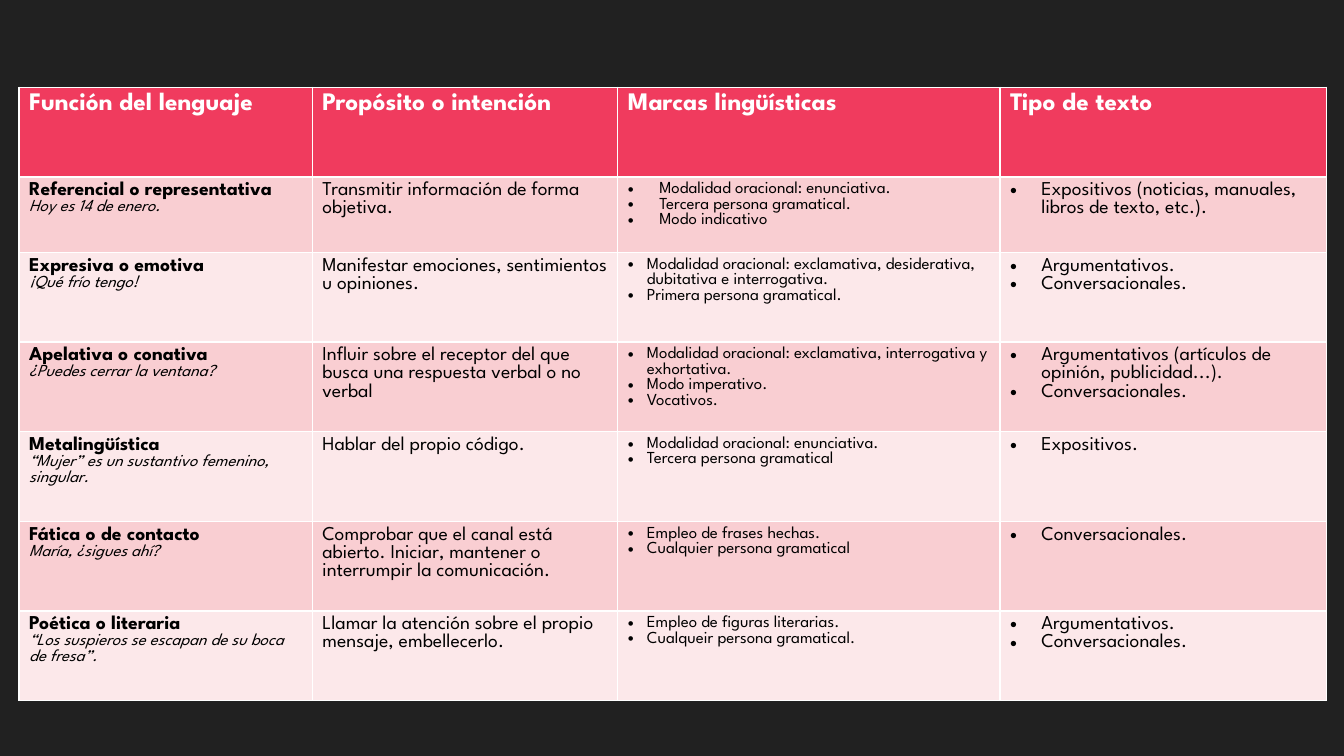
from pptx import Presentation
from pptx.dml.color import RGBColor
from pptx.util import Cm, Pt
from lxml.etree import SubElement
from pptx.oxml.ns import qn

FONT = "League Spartan"
BACKGROUND, WHITE, BLACK = "212121", "FFFFFF", "000000"
HEADER_FILL, BAND_FILLS = "F03B5E", ("F9CED2", "FCE8EA")

HEADERS = ["Función del lenguaje", "Propósito o intención",
           "Marcas lingüísticas", "Tipo de texto"]
# Function, example, purpose, linguistic marks, text types
FUNCTIONS = [
    ("Referencial o representativa", "Hoy es 14 de enero.",
     "Transmitir información de forma objetiva.",
     ["Modalidad oracional: enunciativa.", "Tercera persona gramatical.",
      "Modo indicativo"],
     ["Expositivos (noticias, manuales, libros de texto, etc.)."]),
    ("Expresiva o emotiva", "¡Qué frío tengo!",
     "Manifestar emociones, sentimientos u opiniones.",
     ["Modalidad oracional: exclamativa, desiderativa, dubitativa e interrogativa.",
      "Primera persona gramatical."],
     ["Argumentativos.", "Conversacionales."]),
    ("Apelativa o conativa", "¿Puedes cerrar la ventana?",
     "Influir sobre el receptor del que busca una respuesta verbal o no verbal",
     ["Modalidad oracional: exclamativa, interrogativa y exhortativa.",
      "Modo imperativo.", "Vocativos."],
     ["Argumentativos (artículos de opinión, publicidad...).", "Conversacionales."]),
    ("Metalingüística", "“Mujer” es un sustantivo femenino, singular.",
     "Hablar del propio código.",
     ["Modalidad oracional: enunciativa.", "Tercera persona gramatical"],
     ["Expositivos."]),
    ("Fática o de contacto", "María, ¿sigues ahí?",
     "Comprobar que el canal está abierto. Iniciar, mantener o interrumpir la comunicación.",
     ["Empleo de frases hechas.", "Cualquier persona gramatical"],
     ["Conversacionales."]),
    ("Poética o literaria", "“Los suspieros se escapan de su boca de fresa”.",
     "Llamar la atención sobre el propio mensaje, embellecerlo.",
     ["Empleo de figuras literarias.", "Cualqueir persona gramatical."],
     ["Argumentativos.", "Conversacionales."]),
]

LEFT, TOP = 0.48, 2.2
COLUMN_WIDTHS = [7.39, 7.7, 9.63, 8.23]
ROW_HEIGHTS = [2.26, 1.9] + [2.26] * 5
WIDE_INDENT, NARROW_INDENT = 0.79, 0.48

HEADING = {"size": Pt(18), "bold": True}
NAME = {"size": Pt(14), "bold": True}
EXAMPLE = {"size": Pt(12), "bold": False, "italic": True}
BODY = {"size": Pt(14), "bold": False}
MARK = {"size": Pt(12), "bold": False}


def paint(fill, color):
    fill.solid()
    fill.fore_color.rgb = RGBColor.from_string(color)


def add_bullet(paragraph, indent):
    properties = paragraph._p.get_or_add_pPr()
    properties.set("marL", str(Cm(indent)))
    properties.set("indent", str(-Cm(indent)))
    SubElement(properties, qn("a:buFont"), typeface="Arial")
    SubElement(properties, qn("a:buChar"), char="•")


def fill_cell(cell, fill, color, lines, indent=None):
    """Write (text, format) lines into a cell, bulleted when an indent is given."""
    paint(cell.fill, fill)
    frame = cell.text_frame
    for number, (text, text_format) in enumerate(lines):
        paragraph = frame.add_paragraph() if number else frame.paragraphs[0]
        if indent:
            add_bullet(paragraph, indent)
        run = paragraph.add_run()
        run.text = text
        run.font.name = FONT
        paint(run.font.fill, color)
        for attribute, value in text_format.items():
            setattr(run.font, attribute, value)


def main():
    presentation = Presentation()
    presentation.slide_width, presentation.slide_height = Cm(33.87), Cm(19.05)
    slide = presentation.slides.add_slide(presentation.slide_layouts[6])
    paint(slide.background.fill, BACKGROUND)

    table = slide.shapes.add_table(
        len(ROW_HEIGHTS), len(COLUMN_WIDTHS), Cm(LEFT), Cm(TOP),
        Cm(sum(COLUMN_WIDTHS)), Cm(sum(ROW_HEIGHTS))).table
    for column, width in zip(table.columns, COLUMN_WIDTHS):
        column.width = Cm(width)
    for row, height in zip(table.rows, ROW_HEIGHTS):
        row.height = Cm(height)

    for column, header in enumerate(HEADERS):
        fill_cell(table.cell(0, column), HEADER_FILL, WHITE, [(header, HEADING)])
    for row, (name, example, purpose, marks, types) in enumerate(FUNCTIONS, 1):
        mark_indent = WIDE_INDENT if row == 1 else NARROW_INDENT
        contents = [
            ([(name, NAME), (example, EXAMPLE)], None),
            ([(purpose, BODY)], None),
            ([(mark, MARK) for mark in marks], mark_indent),
            ([(kind, BODY) for kind in types], WIDE_INDENT),
        ]
        for column, (lines, indent) in enumerate(contents):
            fill_cell(table.cell(row, column), BAND_FILLS[(row - 1) % 2],
                      BLACK, lines, indent)

    presentation.save("out.pptx")


if __name__ == "__main__":
    main()
